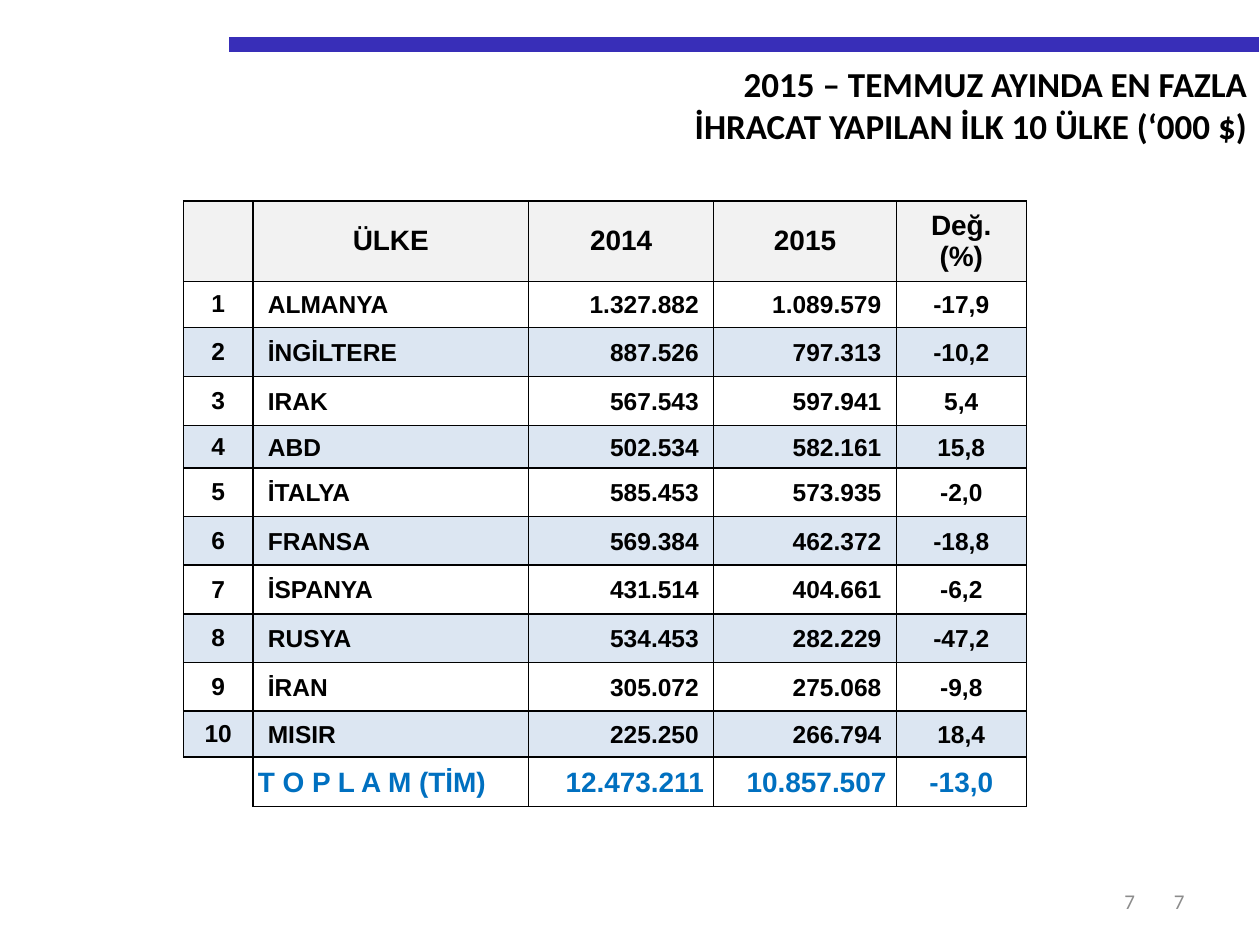
from lxml import etree
from pptx import Presentation
from pptx import util as u
from pptx.dml.color import RGBColor
from pptx.enum import shapes, text
from pptx.oxml.ns import qn

LEFT, MID, RIGHT = text.PP_ALIGN.LEFT, text.PP_ALIGN.CENTER, text.PP_ALIGN.RIGHT
HEAD = ["", "ÜLKE", "2014", "2015", "Değ.\n(%)"]
DATA = [
    ("ALMANYA", "1.327.882", "1.089.579", "-17,9"),
    ("İNGİLTERE", "887.526", "797.313", "-10,2"),
    ("IRAK", "567.543", "597.941", "5,4"),
    ("ABD", "502.534", "582.161", "15,8"),
    ("İTALYA", "585.453", "573.935", "-2,0"),
    ("FRANSA", "569.384", "462.372", "-18,8"),
    ("İSPANYA", "431.514", "404.661", "-6,2"),
    ("RUSYA", "534.453", "282.229", "-47,2"),
    ("İRAN", "305.072", "275.068", "-9,8"),
    ("MISIR", "225.250", "266.794", "18,4"),
]
TOTAL = ["", "T O P L A M (TİM)", "12.473.211", "10.857.507", "-13,0"]
COLS = [1.4, 5.56, 3.73, 3.68, 2.62]
ROWS = [1.62, 0.93, 0.99, 0.99, 0.85] + [0.98] * 5 + [0.93, 0.99]


def color(code):
    """Turn a hex string into a colour."""
    return RGBColor.from_string(code)


def style(frame, size, code, align, bold=True, face="Arial"):
    """Format every paragraph and run of a text frame."""
    for para in frame.paragraphs:
        para.alignment = align
        for run in para.runs:
            font = run.font
            font.name, font.size, font.bold = face, u.Pt(size), bold
            font.color.rgb = color(code)


def add_bar(slide, left, top, width):
    """Draw the thick rule above the title."""
    bar = slide.shapes.add_connector(
        shapes.MSO_CONNECTOR.STRAIGHT, u.Cm(left), u.Cm(top), u.Cm(left + width), u.Cm(top))
    bar.line.color.rgb = color("382EB8")
    bar.line.width = u.Pt(8.5)
    etree.SubElement(bar._element.spPr, qn("a:effectLst"))


def add_title(slide, left, top, width, height):
    """Place and format the title placeholder."""
    title = slide.shapes.title
    title.left, title.top, title.width, title.height = map(u.Cm, (left, top, width, height))
    frame = title.text_frame
    frame.text = "2015 – TEMMUZ AYINDA EN FAZLA\nİHRACAT YAPILAN İLK 10 ÜLKE (‘000 $)"
    frame.vertical_anchor = text.MSO_ANCHOR.TOP
    frame.auto_size = text.MSO_AUTO_SIZE.SHAPE_TO_FIT_TEXT
    style(frame, 20, "000000", RIGHT, face="Calibri")


def add_page(slide, left, top, width, height):
    """Write a page number at the right of its box."""
    box = slide.shapes.add_textbox(*map(u.Cm, (left, top, width, height)))
    frame = box.text_frame
    frame.word_wrap = True
    frame.vertical_anchor = text.MSO_ANCHOR.MIDDLE
    frame.text = "7"
    style(frame, 12, "8C8C8C", RIGHT, bold=False, face="Calibri")


def set_edges(cell, sides):
    """Rule the named sides of a cell and clear the others."""
    props = cell._tc.get_or_add_tcPr()
    for side in "LRTB":
        line = etree.SubElement(props, qn(f"a:ln{side}"), w=str(u.Pt(1)))
        if side in sides:
            fill = etree.SubElement(line, qn("a:solidFill"))
            etree.SubElement(fill, qn("a:srgbClr"), val="000000")
        else:
            etree.SubElement(line, qn("a:noFill"))


def set_cell(cell, words, row, col):
    """Fill and format one cell by its row and column."""
    head, last = row == 0, row == len(ROWS) - 1
    set_edges(cell, "RT" if last and col == 0 else "LRTB")
    if head or (row % 2 == 0 and not last):
        cell.fill.solid()
        cell.fill.fore_color.rgb = color("F2F2F2" if head else "DCE6F2")
    else:
        cell.fill.background()
    if head or (col == 0 and not last):
        align, pads = MID, (0.25, 0.13, 0.25, 0.13)
    else:
        align = (MID, LEFT, RIGHT, RIGHT, MID)[col]
        start = (0.1 if last else 0.3) if align == LEFT else 0.03
        end = (0.2 if last else 0.3) if align == RIGHT else 0.03
        pads = (start, 0.03, end, 0)
    cell.margin_left, cell.margin_top, cell.margin_right, cell.margin_bottom = map(u.Cm, pads)
    cell.vertical_anchor = text.MSO_ANCHOR.MIDDLE
    cell.text_frame.text = words
    style(cell.text_frame, 16 if head or last else 14, "0070C0" if last else "000000", align)


def add_grid(slide, left, top):
    """Build the table of the ten countries and the total."""
    body = [(str(rank), *entry) for rank, entry in enumerate(DATA, 1)]
    grid = slide.shapes.add_table(
        len(ROWS), len(COLS), *map(u.Cm, (left, top, sum(COLS), sum(ROWS)))).table
    grid.first_row = grid.horz_banding = False
    for col, width in zip(grid.columns, COLS):
        col.width = u.Cm(width)
    for row, height in zip(grid.rows, ROWS):
        row.height = u.Cm(height)
    for row, entry in enumerate([HEAD, *body, TOTAL]):
        for col, words in enumerate(entry):
            set_cell(grid.cell(row, col), words, row, col)


def main():
    """Build the slide and save it."""
    deck = Presentation()
    deck.slide_width, deck.slide_height = u.Cm(25.4), u.Cm(19.05)
    slide = deck.slides.add_slide(deck.slide_layouts[5])
    add_bar(slide, 4.62, 0.89, 20.76)
    add_title(slide, 2.69, 1.14, 22.71, 1.96)
    add_grid(slide, 3.7, 4.05)
    add_page(slide, 18.2, 17.66, 5.93, 1.01)
    add_page(slide, 17.8, 17.66, 5.33, 1.01)
    deck.save("out.pptx")


if __name__ == "__main__":
    main()
